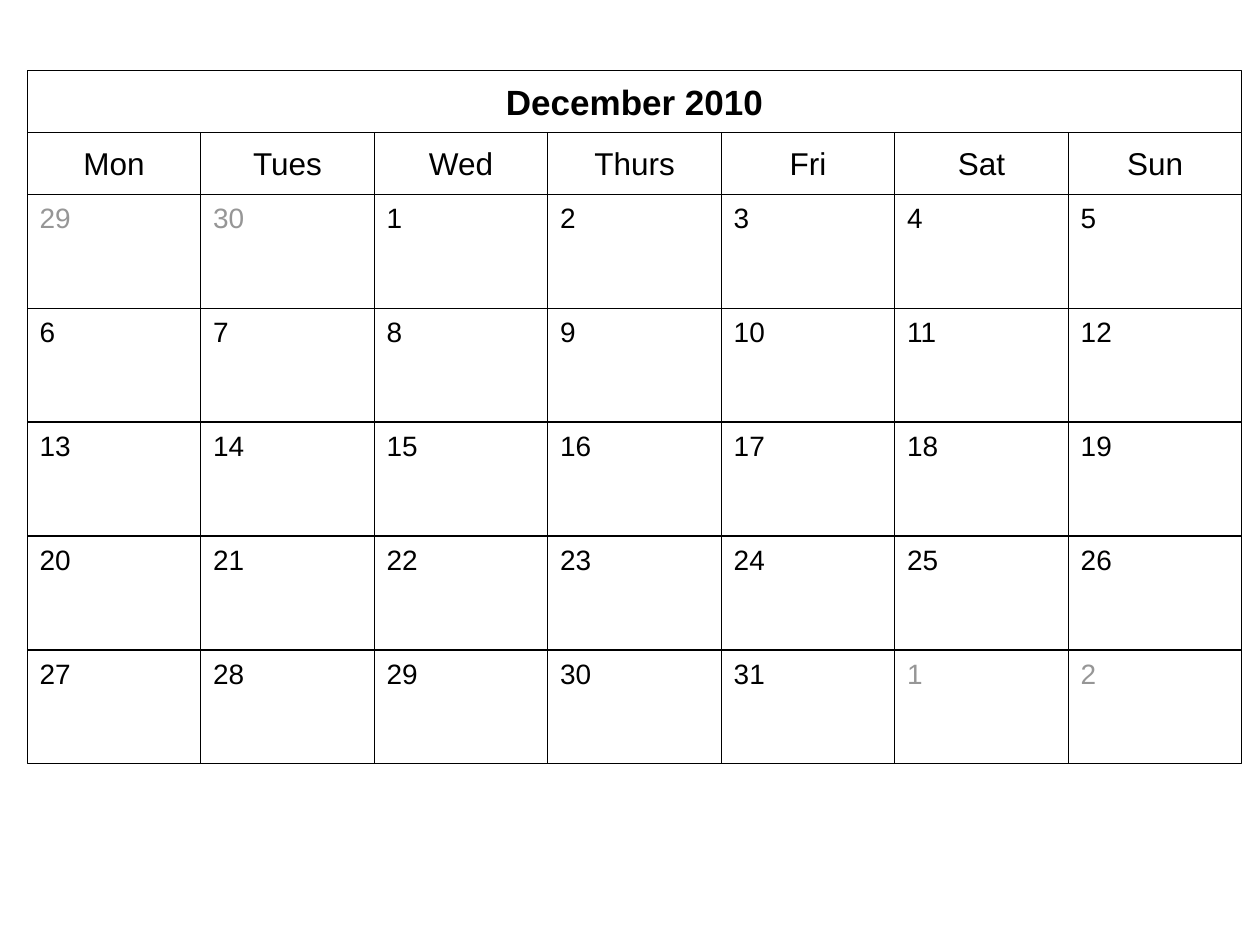
from dataclasses import dataclass

from pptx import Presentation
from pptx.dml.color import RGBColor
from pptx.enum.shapes import MSO_SHAPE
from pptx.enum.text import MSO_ANCHOR, MSO_AUTO_SIZE, PP_ALIGN
from pptx.shapes.autoshape import Shape
from pptx.slide import Slide
from pptx.util import Pt

RECTANGLE = MSO_SHAPE.RECTANGLE
TOP, MIDDLE = MSO_ANCHOR.TOP, MSO_ANCHOR.MIDDLE
LEFT, CENTER = PP_ALIGN.LEFT, PP_ALIGN.CENTER
NO_AUTOFIT = MSO_AUTO_SIZE.NONE
TITLE_ONLY = 5


@dataclass(frozen=True)
class Theme:
    font: str = "Arial"
    ink: RGBColor = RGBColor(0x00, 0x00, 0x00)
    muted: RGBColor = RGBColor(0x96, 0x96, 0x96)
    paper: RGBColor = RGBColor(0xFF, 0xFF, 0xFF)
    month_size: float = 20
    weekday_size: float = 18
    date_size: float = 16
    border: float = 0.75


@dataclass(frozen=True)
class Box:
    """A rectangle in points."""
    left: float
    top: float
    width: float
    height: float


@dataclass(frozen=True)
class Day:
    number: int
    in_month: bool


THEME = Theme()
MONTH = "December 2010"
WEEKDAYS = ["Mon", "Tues", "Wed", "Thurs", "Fri", "Sat", "Sun"]
WEEKS = 5
LEADING_DAYS = 2
DAYS_IN_MONTH = 31
DAYS_IN_PREVIOUS_MONTH = 30

GRID_LEFT, GRID_TOP = 15.6, 40.2
COLUMN_WIDTH = 99.15
HEADER_HEIGHT, WEEK_HEIGHT = 35.4, 65.1
WEEKDAYS_TOP = GRID_TOP + HEADER_HEIGHT
WEEKS_TOP = WEEKDAYS_TOP + HEADER_HEIGHT


def day_at(position: int) -> Day:
    """Return the day at a zero-based position in the calendar grid."""
    number = position - LEADING_DAYS + 1
    if number < 1:
        return Day(number + DAYS_IN_PREVIOUS_MONTH, False)
    if number > DAYS_IN_MONTH:
        return Day(number - DAYS_IN_MONTH, False)
    return Day(number, True)


def write_text(shape: Shape, text: str, *, size: float, color: RGBColor = THEME.ink,
               bold: bool = False, align: PP_ALIGN = CENTER,
               anchor: MSO_ANCHOR = MIDDLE, inset: float = 1.8) -> None:
    frame = shape.text_frame
    frame.word_wrap = True
    frame.auto_size = NO_AUTOFIT
    frame.vertical_anchor = anchor
    frame.margin_left = frame.margin_right = Pt(7.2)
    frame.margin_top = frame.margin_bottom = Pt(inset)
    frame.text = text
    paragraph = frame.paragraphs[0]
    paragraph.alignment = align
    paragraph.line_spacing = 1.0
    font = paragraph.runs[0].font
    font.name, font.size, font.bold = THEME.font, Pt(size), bold
    font.color.rgb = color


def draw_border(shape: Shape) -> None:
    shape.line.color.rgb = THEME.ink
    shape.line.width = Pt(THEME.border)


def fill_paper(shape: Shape) -> None:
    shape.fill.solid()
    shape.fill.fore_color.rgb = THEME.paper


def add_cell(slide: Slide, box: Box) -> Shape:
    cell = slide.shapes.add_shape(RECTANGLE, Pt(box.left), Pt(box.top),
                                  Pt(box.width), Pt(box.height))
    cell.shadow.inherit = False
    cell.fill.background()
    draw_border(cell)
    return cell


def draw_month(slide: Slide) -> None:
    month = slide.shapes.title
    month.left, month.top = Pt(GRID_LEFT), Pt(GRID_TOP)
    month.width = Pt(COLUMN_WIDTH * len(WEEKDAYS))
    month.height = Pt(HEADER_HEIGHT)
    fill_paper(month)
    draw_border(month)
    write_text(month, MONTH, size=THEME.month_size, bold=True)


def draw_weekday(slide: Slide, column: int, weekday: str) -> None:
    cell = add_cell(slide, Box(GRID_LEFT + column * COLUMN_WIDTH, WEEKDAYS_TOP,
                               COLUMN_WIDTH, HEADER_HEIGHT))
    fill_paper(cell)
    write_text(cell, weekday, size=THEME.weekday_size)


def draw_day(slide: Slide, position: int) -> None:
    week, column = divmod(position, len(WEEKDAYS))
    day = day_at(position)
    cell = add_cell(slide, Box(GRID_LEFT + column * COLUMN_WIDTH,
                               WEEKS_TOP + week * WEEK_HEIGHT,
                               COLUMN_WIDTH, WEEK_HEIGHT))
    write_text(cell, str(day.number), size=THEME.date_size,
               color=THEME.ink if day.in_month else THEME.muted,
               align=LEFT, anchor=TOP, inset=3.6)


def main() -> None:
    presentation = Presentation()
    presentation.slide_width, presentation.slide_height = Pt(720), Pt(540)
    slide = presentation.slides.add_slide(presentation.slide_layouts[TITLE_ONLY])
    draw_month(slide)
    for column, weekday in enumerate(WEEKDAYS):
        draw_weekday(slide, column, weekday)
    for position in range(WEEKS * len(WEEKDAYS)):
        draw_day(slide, position)
    presentation.save("out.pptx")


if __name__ == "__main__":
    main()
